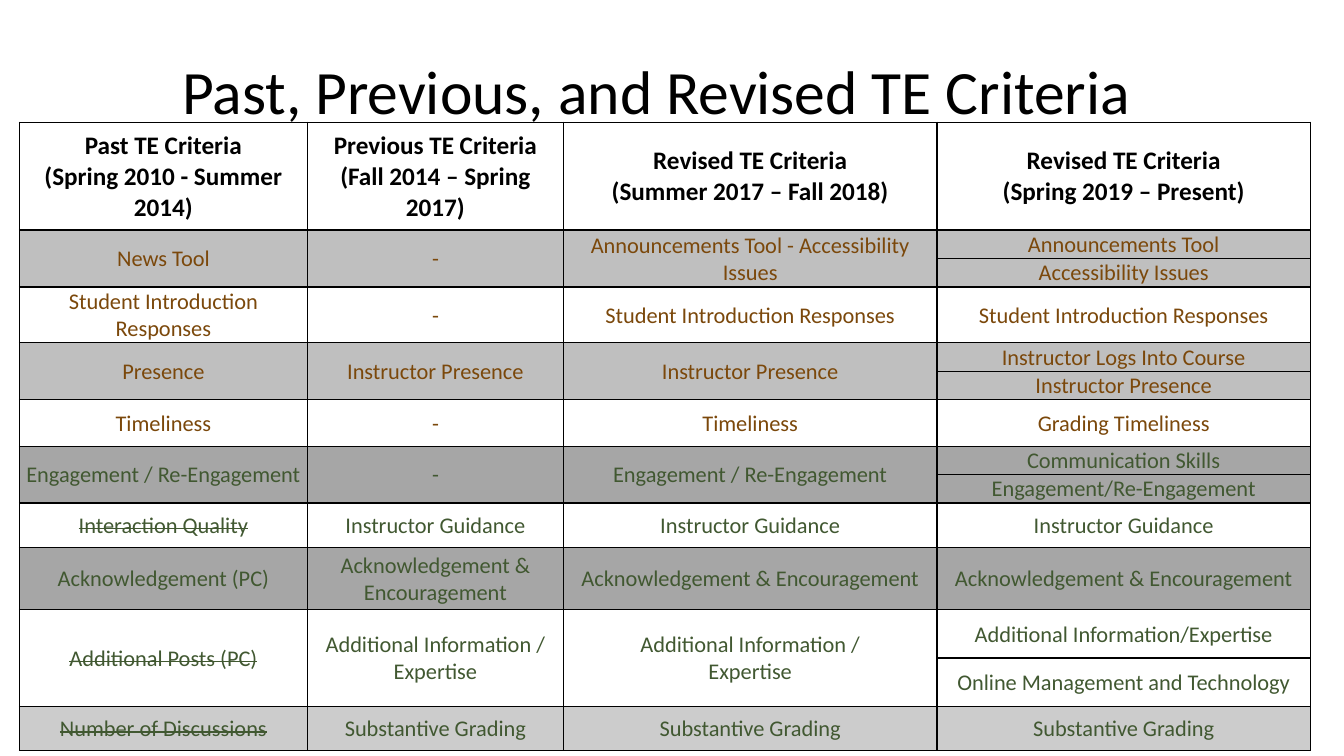
import pptx
import pptx.dml.color
import pptx.enum.text
import pptx.oxml
import pptx.oxml.ns
import pptx.util

Pt = pptx.util.Pt
FONT = "Calibri"
BLACK, BROWN, GREEN = "000000", "7B480B", "415831"
LIGHT, DARK = "BFBFBF", "A6A6A6"
VEIL = "veil"
COLUMN_WIDTHS = [205.7, 182.9, 266.8, 266.8]
RETIRED = {"Interaction Quality", "Additional Posts (PC)", "Number of Discussions"}
INTRODUCTION = "Student Introduction Responses"
ENGAGEMENT = "Engagement / Re-Engagement"
ENCOURAGEMENT = "Acknowledgement & Encouragement"

HEADINGS = [
    "Past TE Criteria\n(Spring 2010 - Summer 2014)",
    "Previous TE Criteria\n(Fall 2014 – Spring 2017)",
    "Revised TE Criteria\n(Summer 2017 – Fall 2018)",
    "Revised TE Criteria\n(Spring 2019 – Present)",
]
HEADING_HEIGHT = 77.1

# Each criterion: row heights, fill, text colour, first three columns, last column by row.
CRITERIA = [
    ([17.3, 17.3], LIGHT, BROWN,
     ["News Tool", "-", "Announcements Tool - Accessibility Issues"],
     ["Announcements Tool", "Accessibility Issues"]),
    ([17.3 * 2], None, BROWN, [INTRODUCTION, "-", INTRODUCTION], [INTRODUCTION]),
    ([17.3, 15.8], LIGHT, BROWN,
     ["Presence", "Instructor Presence", "Instructor Presence"],
     ["Instructor Logs Into Course", "Instructor Presence"]),
    ([33.3], None, BROWN, ["Timeliness", "-", "Timeliness"], ["Grading Timeliness"]),
    ([17.3, 17.3], DARK, GREEN, [ENGAGEMENT, "-", ENGAGEMENT],
     ["Communication Skills", "Engagement/Re-Engagement"]),
    ([31.8], None, GREEN,
     ["Interaction Quality", "Instructor Guidance", "Instructor Guidance"],
     ["Instructor Guidance"]),
    ([44.4], DARK, GREEN,
     ["Acknowledgement (PC)", ENCOURAGEMENT, ENCOURAGEMENT], [ENCOURAGEMENT]),
    ([34.6, 34.6], None, GREEN,
     ["Additional Posts (PC)", "Additional Information / Expertise",
      "Additional Information /\nExpertise"],
     ["Additional Information/Expertise", "Online Management and Technology"]),
    ([31.5], VEIL, GREEN,
     ["Number of Discussions", "Substantive Grading", "Substantive Grading"],
     ["Substantive Grading"]),
]


def rgb(value):
    """Return the colour for a hex string."""
    return pptx.dml.color.RGBColor.from_string(value)


def write(frame, words, size, color, bold=False):
    """Write centred lines of text, striking out retired criteria."""
    for index, line in enumerate(words.split("\n")):
        paragraph = frame.add_paragraph() if index else frame.paragraphs[0]
        paragraph.alignment = pptx.enum.text.PP_ALIGN.CENTER
        run = paragraph.add_run()
        run.text = line
        run.font.name = FONT
        run.font.size = Pt(size)
        run.font.bold = bold
        run.font.color.rgb = rgb(color)
        if line in RETIRED:
            run.font._element.set("strike", "sngStrike")


def style_cell(cell, fill, top=1, bottom=1):
    """Set the borders, margins and fill of a cell."""
    properties = cell._tc.get_or_add_tcPr()
    for side, width in (("L", 1), ("R", 1), ("T", top), ("B", bottom)):
        properties.append(pptx.oxml.parse_xml(
            f'<a:ln{side} {pptx.oxml.ns.nsdecls("a")} w="{Pt(width)}">'
            f'<a:solidFill><a:srgbClr val="{BLACK}"/></a:solidFill></a:ln{side}>'))
    cell.margin_left = cell.margin_right = cell.margin_top = Pt(0.72)
    cell.margin_bottom = Pt(0)
    cell.vertical_anchor = pptx.enum.text.MSO_ANCHOR.MIDDLE
    if fill is None:
        cell.fill.background()
        return
    cell.fill.solid()
    cell.fill.fore_color.rgb = rgb(BLACK if fill == VEIL else fill)
    if fill == VEIL:
        shade = properties.find(pptx.oxml.ns.qn("a:solidFill"))[0]
        shade.append(pptx.oxml.parse_xml(
            f'<a:alpha {pptx.oxml.ns.nsdecls("a")} val="20000"/>'))


def add_title(slide, left, top, width, height):
    """Place the slide title in the given box."""
    title = slide.shapes.title
    title.left, title.top, title.width, title.height = map(Pt, (left, top, width, height))
    title.text_frame.vertical_anchor = pptx.enum.text.MSO_ANCHOR.MIDDLE
    write(title.text_frame, "Past, Previous, and Revised TE Criteria", 44, BLACK)


def add_criteria(slide, left, top):
    """Place the table of criteria with its top left corner at the given point."""
    heights = [HEADING_HEIGHT] + [h for criterion in CRITERIA for h in criterion[0]]
    criteria = slide.shapes.add_table(
        len(heights), len(COLUMN_WIDTHS), Pt(left), Pt(top),
        Pt(sum(COLUMN_WIDTHS)), Pt(sum(heights))).table
    criteria.first_row = criteria.horz_banding = False
    for column, width in zip(criteria.columns, COLUMN_WIDTHS):
        column.width = Pt(width)
    for row, height in zip(criteria.rows, heights):
        row.height = Pt(height)

    for column, heading in enumerate(HEADINGS):
        cell = criteria.cell(0, column)
        style_cell(cell, None, bottom=2)
        write(cell.text_frame, heading, 18, BLACK, bold=True)

    first = 1
    for spans, fill, color, earlier, present in CRITERIA:
        last = first + len(spans) - 1
        for row in range(first, last + 1):
            for column in range(len(COLUMN_WIDTHS)):
                style_cell(criteria.cell(row, column), fill, top=2 if row == 1 else 1)
        for column, words in enumerate(earlier):
            cell = criteria.cell(first, column)
            if last > first:
                cell.merge(criteria.cell(last, column))
            write(cell.text_frame, words, 16, color)
        for row, words in enumerate(present, first):
            write(criteria.cell(row, len(earlier)).text_frame, words, 16, color)
        first = last + 1


def main():
    """Build and save the slide."""
    deck = pptx.Presentation()
    deck.slide_width, deck.slide_height = Pt(960), Pt(540)
    slide = deck.slides.add_slide(deck.slide_layouts[5])
    add_title(slide, 112.3, 13, 713.5, 103)
    add_criteria(slide, 13.9, 87.3)
    deck.save("out.pptx")


if __name__ == "__main__":
    main()
